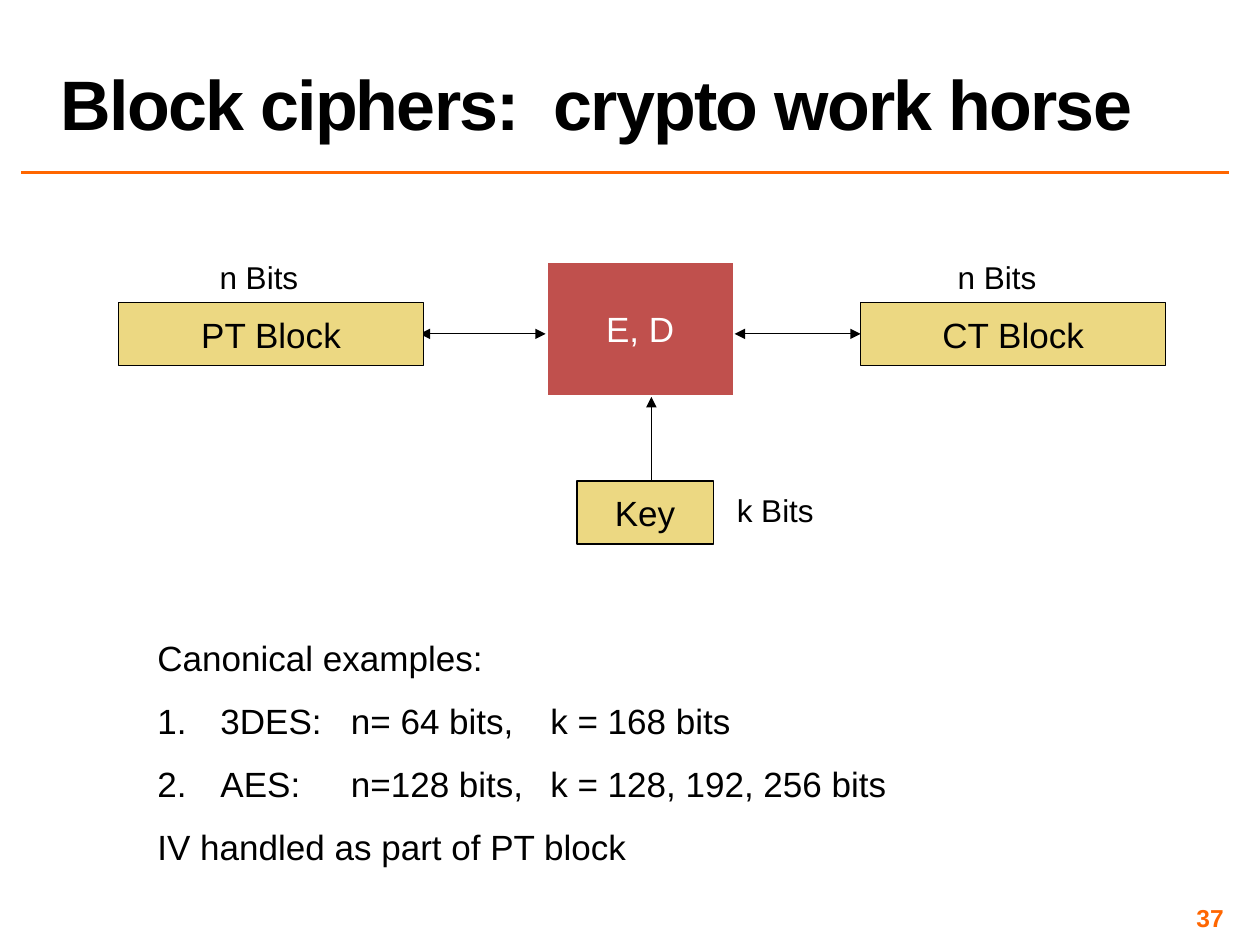
from lxml import etree
from pptx import Presentation
from pptx.dml.color import RGBColor
from pptx.enum.shapes import MSO_CONNECTOR, MSO_SHAPE
from pptx.enum.text import MSO_ANCHOR, MSO_AUTO_SIZE, PP_ALIGN
from pptx.oxml.ns import qn
from pptx.util import Cm, Pt

LEFT, CENTER, RIGHT = PP_ALIGN.LEFT, PP_ALIGN.CENTER, PP_ALIGN.RIGHT
MIDDLE, BOTTOM = MSO_ANCHOR.MIDDLE, MSO_ANCHOR.BOTTOM
RECTANGLE, STRAIGHT = MSO_SHAPE.RECTANGLE, MSO_CONNECTOR.STRAIGHT
NO_AUTOFIT = MSO_AUTO_SIZE.NONE

THEME = {
    "font": "Arial",
    "black": "000000", "white": "FFFFFF", "accent": "FF6600",
    "cipher": "C0504D", "block": "ECD882",
    "title": 40, "body": 20, "label": 18, "number": 14,
}

TITLE = "Block ciphers:  crypto work horse"
PAGE_NUMBER = "37"
EXAMPLES = [
    ("Canonical examples:", False, 1.0),
    ("3DES:\tn= 64 bits,\tk = 168 bits", True, 1.5),
    ("AES:\tn=128 bits,\tk = 128, 192, 256 bits", True, 1.5),
    ("IV handled as part of PT block", False, 1.5),
]
EXAMPLE_INDENT = Cm(1.27)
EXAMPLE_TABS = (Cm(3.9), Cm(7.92))

BLOCK_HEIGHT, BLOCK_WIDTH, KEY_WIDTH = 1.27, 6.15, 2.75
BLOCK_TOP, KEY_TOP = 6.1, 9.7
CIPHER = (11.0, 5.26, 3.81, 2.74)
BLOCKS = [
    ("PT Block", 2.39, BLOCK_TOP, BLOCK_WIDTH),
    ("CT Block", 17.35, BLOCK_TOP, BLOCK_WIDTH),
    ("Key", 11.63, KEY_TOP, KEY_WIDTH),
]
LABELS = [("n Bits", 4.17, 5.08), ("n Bits", 19.05, 5.08), ("k Bits", 14.58, 9.78)]
LABEL_SIZE = (2.1, 1.02)
FLOW_Y, KEY_X = 6.73, 13.13
ARROWS = [
    ((8.46, FLOW_Y), (CIPHER[0], FLOW_Y), True),
    ((CIPHER[0] + CIPHER[2], FLOW_Y), (17.35, FLOW_Y), True),
    ((KEY_X, KEY_TOP), (KEY_X, CIPHER[1] + CIPHER[3]), False),
]


def color(name):
    return RGBColor.from_string(THEME[name])


def place(shape, left, top, width, height):
    shape.left, shape.top = Cm(left), Cm(top)
    shape.width, shape.height = Cm(width), Cm(height)


def write(paragraph, text, size, ink="black", align=LEFT, bold=False):
    paragraph.alignment = align
    run = paragraph.add_run()
    run.text = text
    font = run.font
    font.name, font.size, font.bold = THEME["font"], Pt(THEME[size]), bold
    font.color.rgb = color(ink)
    return run


def add_line(slide, start, end, ink, weight):
    line = slide.shapes.add_connector(STRAIGHT, *map(Cm, start + end))
    line.line.color.rgb = color(ink)
    line.line.width = Pt(weight)
    etree.SubElement(line._element.spPr, qn("a:effectLst"))
    return line


def add_arrow(slide, start, end, both_ways):
    arrow = add_line(slide, start, end, "black", 0.75)
    outline = arrow.line._get_or_add_ln()
    for tag in ("a:headEnd", "a:tailEnd") if both_ways else ("a:tailEnd",):
        etree.SubElement(outline, qn(tag), type="triangle")


def add_box(slide, text, bounds, fill, border, weight, ink):
    box = slide.shapes.add_shape(RECTANGLE, *map(Cm, bounds))
    box.shadow.inherit = False
    box.fill.solid()
    box.fill.fore_color.rgb = color(fill)
    box.line.color.rgb = color(border)
    box.line.width = Pt(weight)
    box.text_frame.vertical_anchor = MIDDLE
    write(box.text_frame.paragraphs[0], text, "body", ink, CENTER)


def add_text(slide, text, bounds, size, ink, align, bold=False):
    frame = slide.shapes.add_textbox(*map(Cm, bounds)).text_frame
    frame.word_wrap = bold
    write(frame.paragraphs[0], text, size, ink, align, bold)
    return frame


def fill_title(title):
    place(title, 0.97, 0.05, 23.8, 2.97)
    frame = title.text_frame
    frame.auto_size, frame.vertical_anchor = NO_AUTOFIT, BOTTOM
    paragraph = frame.paragraphs[0]
    paragraph.line_spacing = 0.8
    run = write(paragraph, TITLE, "title", bold=True)
    run.font._element.set("spc", "-100")


def fill_examples(body):
    place(body, 2.92, 12.7, 15.7, 4.95)
    frame = body.text_frame
    frame.auto_size = NO_AUTOFIT
    for index, (text, numbered, spacing) in enumerate(EXAMPLES):
        paragraph = frame.add_paragraph() if index else frame.paragraphs[0]
        paragraph.line_spacing, paragraph.space_before = spacing, Pt(0)
        write(paragraph, text, "body")
        properties = paragraph._p.get_or_add_pPr()
        properties.set("marL", str(EXAMPLE_INDENT))
        properties.set("indent", str(-EXAMPLE_INDENT))
        if numbered:
            etree.SubElement(properties, qn("a:buFont"), typeface=THEME["font"])
            etree.SubElement(properties, qn("a:buAutoNum"), type="arabicPeriod")
            tabs = etree.SubElement(properties, qn("a:tabLst"))
            for position in EXAMPLE_TABS:
                etree.SubElement(tabs, qn("a:tab"), pos=str(position), algn="l")
        else:
            etree.SubElement(properties, qn("a:buNone"))


def main():
    presentation = Presentation()
    presentation.slide_width, presentation.slide_height = Cm(25.4), Cm(19.05)
    slide = presentation.slides.add_slide(presentation.slide_layouts[1])
    add_line(slide, (0.43, 3.48), (24.77, 3.48), "accent", 2)
    fill_title(slide.shapes.title)
    add_box(slide, "E, D", CIPHER, "cipher", "white", 2.25, "white")
    for arrow in ARROWS:
        add_arrow(slide, *arrow)
    for text, left, top, width in BLOCKS:
        bounds = (left, top, width, BLOCK_HEIGHT)
        add_box(slide, text, bounds, "block", "black", 0.75, "black")
    for text, left, top in LABELS:
        add_text(slide, text, (left, top) + LABEL_SIZE, "label", "black", CENTER)
    fill_examples(slide.placeholders[1])
    number = add_text(slide, PAGE_NUMBER, (18.85, 18.2, 5.92, 0.6),
                      "number", "accent", RIGHT, True)
    number.vertical_anchor = MIDDLE
    number.margin_left = number.margin_right = Cm(0.1)
    number.margin_top = number.margin_bottom = Cm(0.1)
    presentation.save("out.pptx")


if __name__ == "__main__":
    main()
